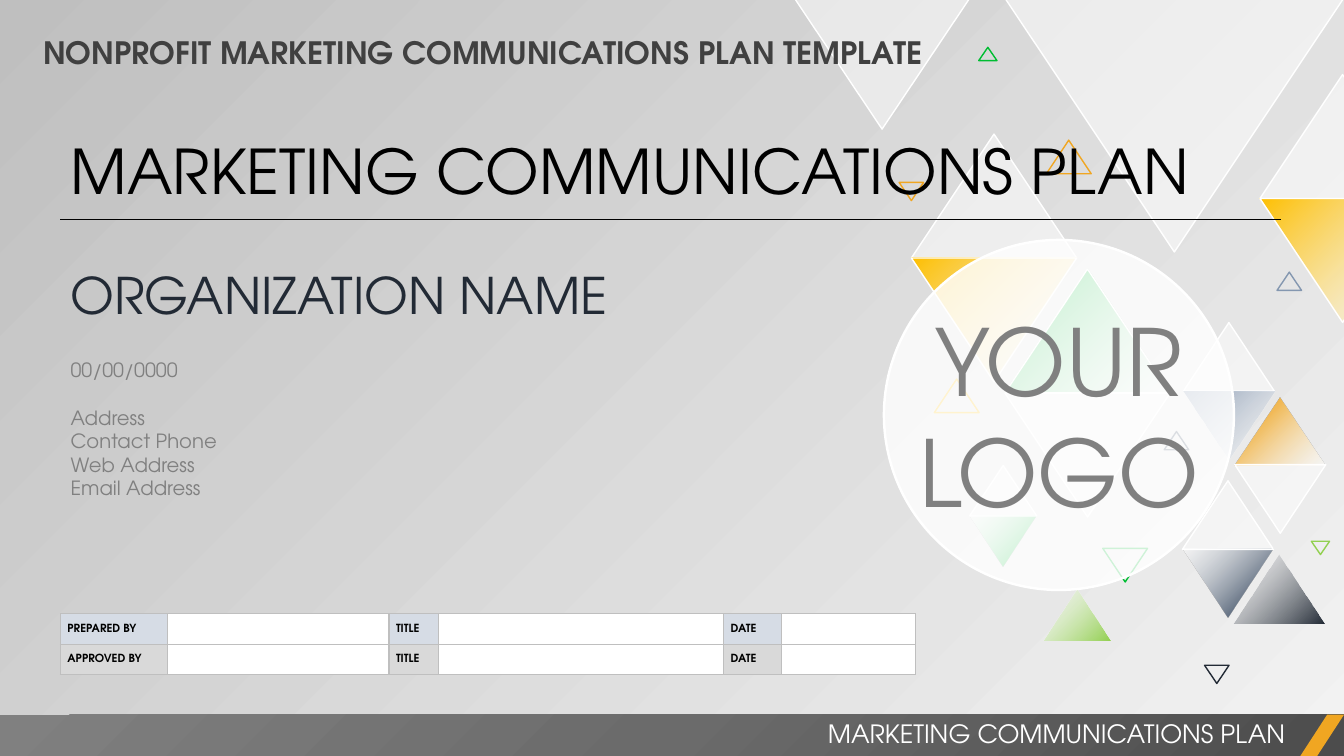
"""Build the cover slide of a nonprofit marketing communications plan."""
from lxml.etree import SubElement
from pptx import Presentation
from pptx.dml.color import RGBColor
from pptx.enum.shapes import MSO_CONNECTOR as LINK, MSO_SHAPE as FORM
from pptx.enum.text import MSO_ANCHOR as ANCHOR, MSO_AUTO_SIZE as FIT, PP_ALIGN as ALIGN
from pptx.oxml import parse_xml
from pptx.oxml.ns import nsdecls, qn
from pptx.util import Pt

DIAGONAL = '<a:lin ang="13500000" scaled="0"/>'
CORNER = '<a:path path="circle"><a:fillToRect l="100000" t="100000"/></a:path>'


def paint(fill, colour, owner=None, opacity=100, direction=DIAGONAL):
    fill.solid()
    if isinstance(colour, str):
        fill.fore_color.rgb = RGBColor.from_string(colour)
        if opacity < 100:
            solid = owner.find(qn("a:solidFill"))
            SubElement(solid[0], qn("a:alpha")).set("val", str(opacity * 1000))
        return
    stops = "".join(
        f'<a:gs pos="{place * 1000}"><a:srgbClr val="{tone}">'
        f'<a:alpha val="{strength * 1000}"/></a:srgbClr></a:gs>'
        for tone, place, strength in colour)
    gradient = parse_xml(f'<a:gradFill {nsdecls("a")} rotWithShape="1">'
                         f'<a:gsLst>{stops}</a:gsLst>{direction}</a:gradFill>')
    owner.replace(owner.find(qn("a:solidFill")), gradient)


def write(paragraph, text, size, colour, bold=False):
    run = paragraph.add_run()
    run.text = text
    run.font.size = Pt(size)
    run.font.bold = bold
    run.font.name = "TeX Gyre Adventor"
    paint(run.font.fill, colour)


deck = Presentation()
deck.slide_width, deck.slide_height = Pt(960), Pt(540)
slide = deck.slides.add_slide(deck.slide_layouts[1])
shapes = slide.shapes
backdrop = slide.background.fill
backdrop.solid()
paint(backdrop, [("F2F2F2", 0, 40), ("BFBFBF", 100, 100)],
      slide.element.find(".//" + qn("p:bgPr")))

# (left, top, points down, style, colour) for each size
TRIANGLES = {
    (118, 88.5): [
        (651, 95.8, False, "glass", "FFFFFF"),
        (651, 184.3, True, "fade out", "FFC000"),
        (717.8, 192.2, False, "fade in", "00BD32"),
        (717.8, 280.8, True, "glass", "FFFFFF"),
        (900, 53.3, False, "glass", "FFFFFF"),
        (900, 141.8, True, "fade out", "FFC000")],
    (242, 181.4): [(717.8, -1.4, True, "glass", "FFFFFF")],
    (125.3, 93.6): [(567.4, -1.4, True, "glass", "FFFFFF")],
    (65, 49): [
        (881.3, 396, False, "fade out", "222A35"),
        (844.6, 391.7, True, "fade in", "44546A"),
        (844.6, 343.4, False, "glass", "FFFFFF"),
        (845.3, 230.4, False, "glass", "FFFFFF"),
        (845.3, 279.4, True, "fade out", "8497B0"),
        (882, 283.7, False, "fade in", "F0A622"),
        (882, 331.9, True, "glass", "FFFFFF")],
    (48, 36): [
        (745.2, 421.2, False, "fade out", "92D050"),
        (692.6, 368.6, True, "fade in", "00BD32"),
        (692.6, 332.6, False, "glass", "FFFFFF")],
    (32, 24): [
        (787.7, 391.7, True, "outline", "00BD32"),
        (667.4, 270.7, False, "outline", "FFC000"),
        (747.4, 100.1, False, "outline", "F0A622")],
    (17.5, 13): [
        (831.6, 308.2, False, "outline", "44546A"),
        (860.4, 475.2, True, "outline", "222A35"),
        (642.2, 130.3, True, "outline", "F0A622"),
        (912.2, 194.4, False, "outline", "8497B0")],
    (13, 9.5): [
        (699.1, 33.8, False, "outline", "00BD32"),
        (936.7, 386.6, True, "outline", "92D050")],
}
mosaic = shapes.add_group_shape()
for (width, height), members in TRIANGLES.items():
    for left, top, down, style, colour in members:
        triangle = mosaic.shapes.add_shape(
            FORM.ISOSCELES_TRIANGLE, Pt(left), Pt(top), Pt(width), Pt(height))
        triangle.shadow.inherit = False
        triangle.rotation = 180 if down else 0
        properties = triangle.element.find(qn("p:spPr"))
        if style == "outline":
            triangle.fill.background()
        elif style == "glass":
            paint(triangle.fill, colour, properties, 50)
        elif style == "fade out":
            paint(triangle.fill, [(colour, 0, 100), ("FFFFFF", 100, 50)], properties)
        else:
            paint(triangle.fill, [("FFFFFF", 0, 50), (colour, 82, 100)], properties)
        if style in ("outline", "glass") or width == 118:
            triangle.line.width = Pt(1)
            paint(triangle.line.fill, colour if style == "outline" else "FFFFFF")
        else:
            triangle.line.fill.background()

band = shapes.add_shape(FORM.RECTANGLE, 0, Pt(510.5), Pt(960), Pt(29.5))
paint(band.fill, [("4C4C4C", 0, 100), ("6B6B6B", 50, 100), ("808080", 100, 100)],
      band.element.find(qn("p:spPr")), direction=CORNER)
slash = shapes.add_shape(FORM.PARALLELOGRAM, Pt(928.8), Pt(510.5), Pt(31.2), Pt(29.5))
slash.adjustments[0] = 0.65
paint(slash.fill, "F0A622")
for strip in (band, slash):
    strip.shadow.inherit = False
    strip.line.fill.background()

for left, top, width, height, text, size, colour, bold, align in (
        (23.8, 20.2, 651.6, 33.8, "NONPROFIT MARKETING COMMUNICATIONS PLAN TEMPLATE",
         22, "404040", True, ALIGN.LEFT),
        (378, 509.8, 547.2, 28.8, "MARKETING COMMUNICATIONS PLAN",
         18, "FFFFFF", False, ALIGN.RIGHT)):
    caption = shapes.add_textbox(Pt(left), Pt(top), Pt(width), Pt(height)).text_frame
    caption.word_wrap = True
    caption.paragraphs[0].alignment = align
    write(caption.paragraphs[0], text, size, colour, bold)

title, contact = shapes.title, slide.placeholders[1]
for holder, top, width, height in ((title, 91.4, 883.4, 60.5), (contact, 185, 640.8, 177)):
    holder.left, holder.top, holder.width, holder.height = Pt(43.2), Pt(top), Pt(width), Pt(height)
    holder.text_frame.auto_size = FIT.NONE
    holder.text_frame.vertical_anchor = ANCHOR.TOP
    holder.element.getparent().append(holder.element)
title.text_frame.paragraphs[0].alignment = ALIGN.LEFT
write(title.text_frame.paragraphs[0], "MARKETING COMMUNICATIONS PLAN", 44, "000000")

for number, (text, size, colour, gap) in enumerate((
        ("ORGANIZATION NAME", 36, "222A35", 0),
        ("00/00/0000", 14, "808080", 24),
        ("Address", 14, "808080", 17),
        ("Contact Phone", 14, "808080", 0),
        ("Web Address", 14, "808080", 0),
        ("Email Address", 14, "808080", 0))):
    frame = contact.text_frame
    detail = frame.add_paragraph() if number else frame.paragraphs[0]
    detail.space_before = Pt(gap)
    write(detail, text, size, colour)
for settings in contact.element.iter(qn("a:pPr")):
    settings.set("marL", "0")
    settings.set("indent", "0")
    SubElement(settings, qn("a:buNone"))

rule = shapes.add_connector(LINK.STRAIGHT, Pt(43.2), Pt(157), Pt(915), Pt(157))
rule.line.width = Pt(0.5)
paint(rule.line.fill, "000000")
SubElement(rule.element.find(qn("p:spPr")), qn("a:effectLst"))

badge = shapes.add_shape(FORM.OVAL, Pt(631.4), Pt(171.4), Pt(250), Pt(250))
badge.shadow.inherit = False
paint(badge.fill, "FFFFFF", badge.element.find(qn("p:spPr")), 81)
badge.line.width = Pt(1.75)
paint(badge.line.fill, "FFFFFF")
frame = badge.text_frame
frame.word_wrap = False
frame.vertical_anchor = ANCHOR.MIDDLE
frame.margin_left = frame.margin_right = frame.margin_top = frame.margin_bottom = 0
frame.add_paragraph()
for line, word in zip(frame.paragraphs, ("YOUR", "LOGO")):
    line.alignment = ALIGN.CENTER
    write(line, word, 66, "808080")

WIDTHS = (76.3, 158.4, 35.3, 203.8, 41, 95.8)
signoff = shapes.add_table(2, 6, Pt(43.2), Pt(438.5), Pt(sum(WIDTHS)), Pt(43.2))
grid = signoff.table
grid.first_row = grid.horz_banding = False
for column, width in zip(grid.columns, WIDTHS):
    column.width = Pt(width)
for row, (role, tint) in enumerate((("PREPARED BY", "D6DCE5"), ("APPROVED BY", "D9D9D9"))):
    for column, label in enumerate((role, "", "TITLE", "", "DATE", "")):
        cell = grid.cell(row, column)
        cell.vertical_anchor = ANCHOR.MIDDLE
        cell.margin_left = cell.margin_right = Pt(5)
        cell.margin_top = cell.margin_bottom = 0
        paint(cell.fill, tint if label else "FFFFFF")
        if label:
            cell.text_frame.paragraphs[0].line_spacing = 1.07
            write(cell.text_frame.paragraphs[0], label, 8, "000000", True)
for paragraph in signoff.element.iter(qn("a:p")):
    SubElement(paragraph, qn("a:endParaRPr")).set("sz", "800")
for settings in signoff.element.iter(qn("a:tcPr")):
    for place, side in enumerate(("lnL", "lnR", "lnT", "lnB")):
        settings.insert(place, parse_xml(
            f'<a:{side} {nsdecls("a")} w="12700"><a:solidFill>'
            f'<a:srgbClr val="BFBFBF"/></a:solidFill></a:{side}>'))

deck.save("out.pptx")
